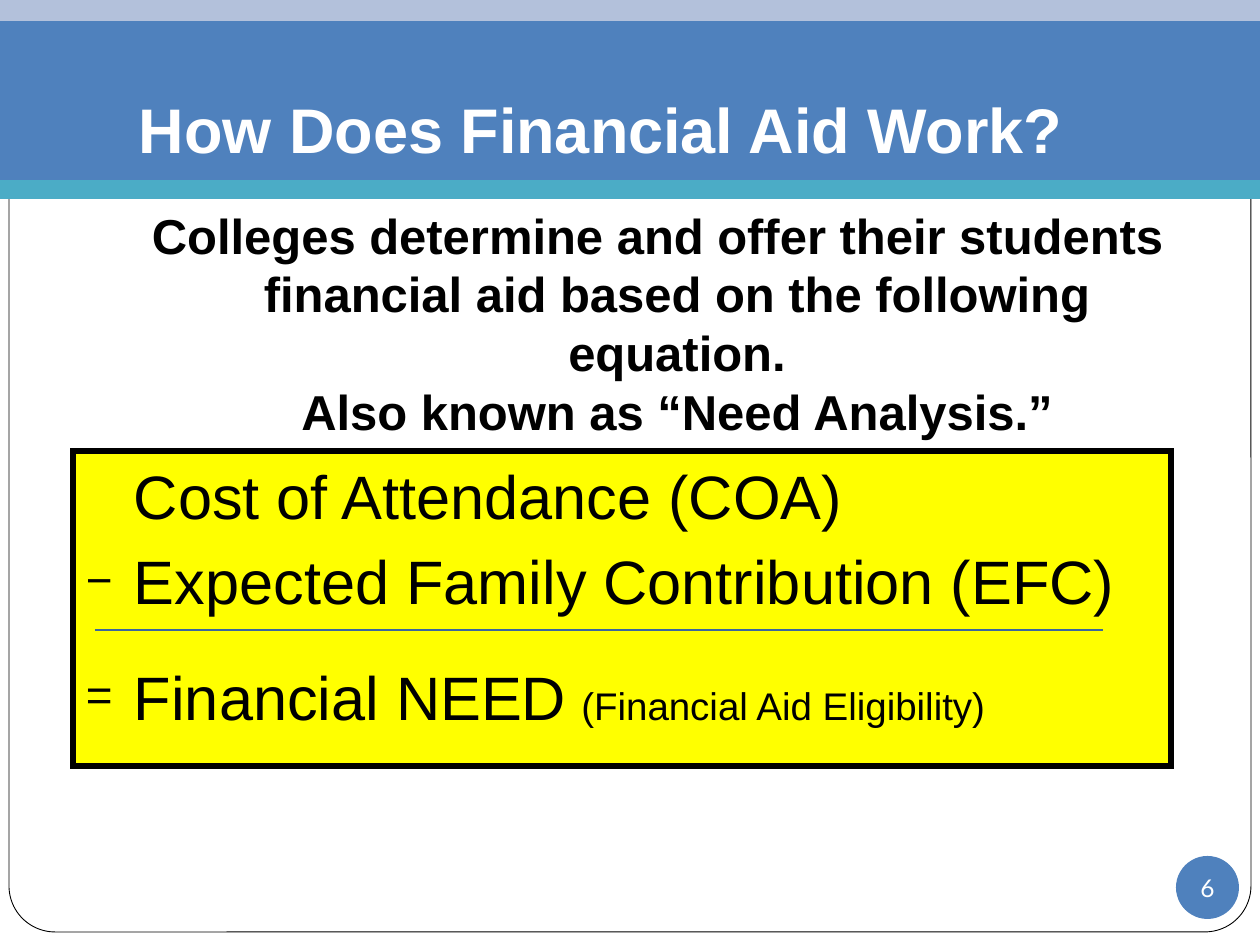
from dataclasses import dataclass
from lxml.etree import SubElement
from pptx import Presentation
from pptx.dml.color import RGBColor as Color
from pptx.enum.shapes import MSO_CONNECTOR as Connector, MSO_SHAPE as Shape
from pptx.enum.text import MSO_ANCHOR as Anchor, PP_ALIGN as Align
from pptx.oxml.ns import qn
from pptx.util import Emu, Pt


@dataclass(frozen=True)
class Theme:
    white: str = "FFFFFF"
    black: str = "000000"
    blue: str = "4F81BD"
    pale: str = "B3C1DB"
    teal: str = "4BACC6"
    yellow: str = "FFFF00"
    rule: str = "3B679C"
    font: str = "Arial"
    number_font: str = "Lato"
    title: int = 36
    body: int = 28
    term: int = 35
    gap: int = 30
    note: int = 22
    number: int = 14


THEME = Theme()
TITLE = "How Does Financial Aid Work?"
INTRO = [
    "Colleges determine and offer their students financial aid based on the following equation.",
    "Also known as “Need Analysis.”",
]
EQUATION = [
    ("", [("Cost of Attendance (COA)", THEME.term)], {}),
    ("−", [("Expected Family Contribution (EFC)", THEME.term)], {"space_before": Pt(7)}),
    (
        "=",
        [("Financial NEED", THEME.term), (" ", THEME.gap), ("(Financial Aid Eligibility)", THEME.note)],
        {"space_before": Pt(7), "line_spacing": 1.4},
    ),
]
PAGE_NUMBER = "6"
FRAME = [
    (Shape.ROUNDED_RECTANGLE, (9, 10, 1242, 922), THEME.white, 0.5, 0.05),
    (Shape.RECTANGLE, (0, 9, 1260, 184), THEME.blue, 0, None),
    (Shape.RECTANGLE, (0, 0, 1260, 21), THEME.pale, 0, None),
    (Shape.RECTANGLE, (0, 180, 1260, 19), THEME.teal, 0, None),
]
INTRO_INDENT = (102, -39)
TERM_INDENT = 48


def px(value):
    return Emu(round(value * 914400 / 126))


def assign(target, values):
    for name, value in values.items():
        setattr(target, name, value)


def add_shape(page, kind, place, fill, line_width=0, corner=None):
    shape = page.shapes.add_shape(kind, *map(px, place))
    shape.shadow.inherit = False
    shape.fill.solid()
    shape.fill.fore_color.rgb = Color.from_string(fill)
    if line_width:
        shape.line.color.rgb = Color.from_string(THEME.black)
        shape.line.width = Pt(line_width)
        SubElement(shape._element.spPr.find(qn("a:ln")), qn("a:miter"), lim="800000")
    else:
        shape.line.fill.background()
    if corner is not None:
        shape.adjustments[0] = corner
    return shape


def set_frame(shape, insets, anchor=Anchor.TOP, wrap=True):
    frame = shape.text_frame
    sides = ("margin_left", "margin_top", "margin_right", "margin_bottom")
    assign(frame, dict(zip(sides, map(px, insets))))
    assign(frame, {"word_wrap": wrap, "vertical_anchor": anchor})
    return frame


def add_span(para, text, size, color=THEME.black, font=THEME.font, bold=False):
    span = para.add_run()
    span.text = text
    assign(span.font, {"size": Pt(size), "name": font, "bold": bold})
    span.font.color.rgb = Color.from_string(color)


def set_indent(para, left, first):
    properties = para._p.get_or_add_pPr()
    properties.set("marL", str(px(left)))
    properties.set("indent", str(px(first)))
    return properties


def add_bullet(properties, mark):
    color = SubElement(properties, qn("a:buClr"))
    SubElement(color, qn("a:srgbClr"), val=THEME.black)
    SubElement(properties, qn("a:buSzPct"), val="75000")
    SubElement(properties, qn("a:buFont"), typeface=THEME.font)
    SubElement(properties, qn("a:buChar"), char=mark)


def add_title(page):
    box = page.shapes.add_textbox(*map(px, (126, 21, 1071, 158)))
    frame = set_frame(box, (13, 6, 13, 13), Anchor.BOTTOM)
    add_span(frame.paragraphs[0], TITLE, THEME.title, THEME.white, bold=True)


def add_page_number(page):
    badge = add_shape(page, Shape.OVAL, (1176, 856, 63, 63), THEME.blue)
    para = set_frame(badge, (0, 0, 0, 0), Anchor.MIDDLE, False).paragraphs[0]
    para.alignment = Align.CENTER
    add_span(para, PAGE_NUMBER, THEME.number, THEME.white, THEME.number_font)


def add_intro(page):
    box = page.shapes.add_textbox(*map(px, (43, 199, 1166, 599)))
    para = set_frame(box, (13, 6, 13, 6)).paragraphs[0]
    set_indent(para, *INTRO_INDENT)
    para.alignment = Align.CENTER
    for index, line in enumerate(INTRO):
        if index:
            para.add_line_break()
        add_span(para, line, THEME.body, bold=True)


def add_equation(page):
    panel = add_shape(page, Shape.RECTANGLE, (73, 451, 1098, 315), THEME.yellow, 3.75)
    frame = set_frame(panel, (13, 7, 13, 6))
    for index, (mark, spans, spacing) in enumerate(EQUATION):
        para = frame.add_paragraph() if index else frame.paragraphs[0]
        assign(para, {"alignment": Align.LEFT, **spacing})
        properties = set_indent(para, TERM_INDENT, -TERM_INDENT if mark else 0)
        if mark:
            add_bullet(properties, mark)
        for text, size in spans:
            add_span(para, text, size)
    rule = page.shapes.add_connector(Connector.STRAIGHT, *map(px, (95, 630, 1103, 630)))
    rule.line.color.rgb = Color.from_string(THEME.rule)
    rule.line.width = Pt(0.75)
    SubElement(rule._element.spPr, qn("a:effectLst"))


def main():
    deck = Presentation()
    assign(deck, {"slide_width": px(1260), "slide_height": px(945)})
    page = deck.slides.add_slide(deck.slide_layouts[6])
    for part in FRAME:
        add_shape(page, *part)
    for add_part in (add_title, add_page_number, add_intro, add_equation):
        add_part(page)
    deck.save("out.pptx")


if __name__ == "__main__":
    main()
